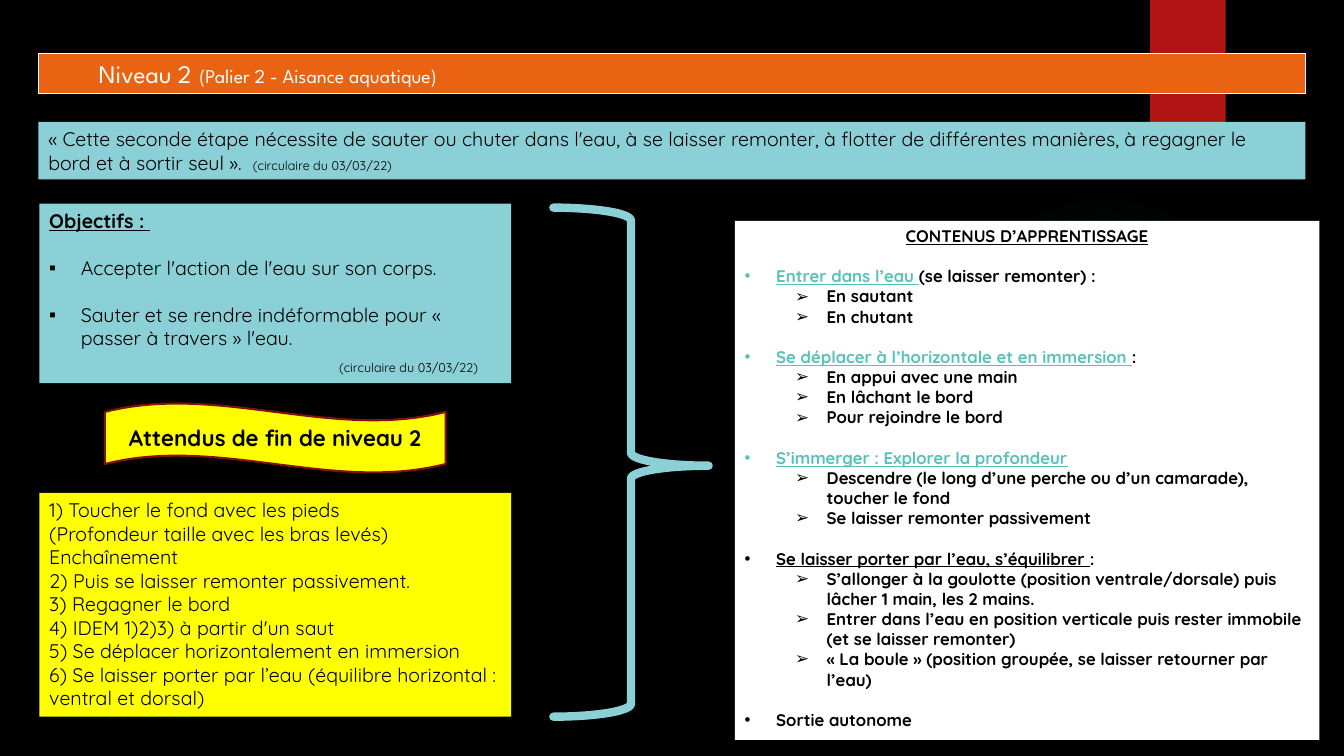
from lxml.etree import SubElement
from pptx import Presentation
from pptx.dml.color import RGBColor
from pptx.enum.shapes import MSO_SHAPE
from pptx.enum.text import MSO_ANCHOR, PP_ALIGN
from pptx.oxml import parse_xml
from pptx.oxml.ns import qn
from pptx.util import Pt

DRAWING_NS = "http://schemas.openxmlformats.org/drawingml/2006/main"
BLACK, WHITE, YELLOW = "000000", "FFFFFF", "FFFF00"
AQUA, TEAL, RED, ORANGE, MAROON = "8AD0D6", "58C1BA", "B01513", "EA6312", "82100E"
BODY_FONT, TITLE_FONT = "Quicksand", "League Spartan"
BULLET_INDENT, SUB_INDENT = 22.5, 58.5


def color(value):
    return RGBColor.from_string(value)


def add_span(para, text, size=14, font=BODY_FONT, ink=BLACK, bold=False, underline=False):
    span = para.add_run()
    span.text = text
    span.font.size = Pt(size)
    span.font.name = font
    span.font.bold = bold
    span.font.underline = underline
    span.font.color.rgb = color(ink)


class SlideBuilder:
    def __init__(self, page):
        self.page = page

    def box(self, left, top, width, height, kind=MSO_SHAPE.RECTANGLE,
            fill=None, line=None, weight=0.75, anchor=MSO_ANCHOR.TOP):
        box = self.page.shapes.add_shape(kind, Pt(left), Pt(top), Pt(width), Pt(height))
        box.shadow.inherit = False
        if fill:
            box.fill.solid()
            box.fill.fore_color.rgb = color(fill)
        else:
            box.fill.background()
        if line:
            box.line.color.rgb = color(line)
            box.line.width = Pt(weight)
        else:
            box.line.fill.background()
        box.text_frame.word_wrap = True
        box.text_frame.vertical_anchor = anchor
        return box

    def paragraph(self, box, *spans, align=PP_ALIGN.LEFT, before=0, bullet=None,
                  indent=0, tabs=(), **style):
        """Each span is a text or a pair of text and its own format."""
        frame = box.text_frame
        para = frame.paragraphs[0]
        if para.runs:
            para = frame.add_paragraph()
        para.alignment = align
        if before:
            para.space_before = Pt(before)
        properties = para._p.get_or_add_pPr()
        properties.set("marL", str(Pt(indent)))
        properties.set("indent", str(-Pt(BULLET_INDENT) if bullet else 0))
        if bullet:
            SubElement(properties, qn("a:buFont"), typeface="Arial")
            SubElement(properties, qn("a:buChar"), char=bullet)
        else:
            SubElement(properties, qn("a:buNone"))
        if tabs:
            stops = SubElement(properties, qn("a:tabLst"))
            for position in tabs:
                SubElement(stops, qn("a:tab"), pos=str(Pt(position)), algn="l")
        for span in spans:
            text, own_style = (span, {}) if isinstance(span, str) else span
            add_span(para, text, **{**style, **own_style})

    def glow(self, left, top, size, tint, stops):
        glow = self.box(left, top, size, size, MSO_SHAPE.OVAL, fill=tint)
        marks = "".join(
            f'<a:gs pos="{place * 1000}"><a:srgbClr val="{tint}">'
            f'<a:alpha val="{alpha * 1000}"/></a:srgbClr></a:gs>'
            for place, alpha in stops)
        gradient = parse_xml(
            f'<a:gradFill xmlns:a="{DRAWING_NS}"><a:gsLst>{marks}</a:gsLst><a:path path="circle">'
            '<a:fillToRect l="50000" t="50000" r="50000" b="50000"/></a:path></a:gradFill>')
        properties = glow._element.spPr
        properties.replace(properties.find(qn("a:solidFill")), gradient)

    def brace(self, left, top, width, height, line, weight, adjustments):
        brace = self.box(left, top, width, height, MSO_SHAPE.RIGHT_BRACE, line=line, weight=weight)
        for index, value in enumerate(adjustments):
            brace.adjustments[index] = value
        brace._element.spPr.find(qn("a:ln")).set("cap", "rnd")


deck = Presentation()
deck.slide_width, deck.slide_height = Pt(960), Pt(540)
page = deck.slides.add_slide(deck.slide_layouts[6])
page.background.fill.solid()
page.background.fill.fore_color.rgb = color(BLACK)
builder = SlideBuilder(page)

# Backdrop
builder.glow(677.5, 131.8, 221.8, "50B9C1", [(0, 7), (36, 6), (69, 0)])
builder.box(821.5, 0, 54, 90, fill=RED)

# Objectives
SOURCE = "(circulaire du 03/03/22)"
objectives = builder.box(28.1, 145.4, 337, 128.2, fill=AQUA)
builder.paragraph(objectives, "Objectifs : ", bold=True, underline=True)
for goal in ("Accepter l'action de l'eau sur son corps.",
             "Sauter et se rendre indéformable pour « passer à travers » l'eau."):
    builder.paragraph(objectives, goal, bullet="▪", indent=BULLET_INDENT, before=16.8)
builder.paragraph(objectives, SOURCE, size=9, indent=207, before=7)

# Expected results
expected = builder.box(28.1, 352.1, 337, 159.8, fill=YELLOW)
for step in ("1) Toucher le fond avec les pieds",
             "(Profondeur taille avec les bras levés)",
             "Enchaînement",
             "2) Puis se laisser remonter passivement.",
             "3) Regagner le bord",
             "4) IDEM 1)2)3) à partir d'un saut",
             "5) Se déplacer horizontalement en immersion",
             "6) Se laisser porter par l’eau (équilibre horizontal : ventral et dorsal)"):
    builder.paragraph(expected, step)

# Quotation and title bar
quotation = builder.box(27.4, 87.1, 905, 41, fill=AQUA)
builder.paragraph(
    quotation,
    "« Cette seconde étape nécessite de sauter ou chuter dans l'eau, à se laisser remonter, "
    "à flotter de différentes manières, à regagner le bord et à sortir seul ».  ",
    (SOURCE, {"size": 9}))
title = builder.box(27.4, 38.2, 905, 28.8, fill=ORANGE, line=WHITE)
builder.paragraph(title, "\tNiveau 2\t", ("(Palier 2 - Aisance aquatique)", {"size": 14}),
                  size=18, font=TITLE_FONT, ink=WHITE, tabs=(360, 612))

# Banner
banner = builder.box(74.9, 288, 243.4, 49.7, MSO_SHAPE.WAVE, fill=YELLOW, line=MAROON,
                     weight=1.5, anchor=MSO_ANCHOR.MIDDLE)
builder.paragraph(banner, "Attendus de fin de niveau 2", size=16, bold=True,
                  align=PP_ALIGN.CENTER)

# Learning contents: heading, rest of the heading line, heading colour, items
LESSONS = [
    ("Entrer dans l’eau ", "(se laisser remonter) :", TEAL,
     ["En sautant", "En chutant"]),
    ("Se déplacer à l’horizontale et en immersion ", ":", TEAL,
     ["En appui avec une main", "En lâchant le bord", "Pour rejoindre le bord"]),
    ("S’immerger : Explorer la profondeur", "", TEAL,
     ["Descendre (le long d’une perche ou d’un camarade), toucher le fond",
      "Se laisser remonter passivement"]),
    ("Se laisser porter par l’eau, s’équilibrer ", ":", BLACK,
     ["S’allonger à la goulotte (position ventrale/dorsale) puis lâcher 1 main, les 2 mains.",
      "Entrer dans l’eau en position verticale puis rester immobile (et se laisser remonter)",
      "« La boule » (position groupée, se laisser retourner par l’eau)"]),
    ("", "Sortie autonome", BLACK, []),
]
contents = builder.box(524.9, 157.7, 417.6, 370.8, fill=WHITE)
strong = {"size": 12, "bold": True}
builder.paragraph(contents, "CONTENUS D’APPRENTISSAGE", underline=True,
                  align=PP_ALIGN.CENTER, **strong)
for heading, rest, ink, items in LESSONS:
    spans = [(heading, {"ink": ink, "underline": True}), (rest, {})]
    builder.paragraph(contents, *[span for span in spans if span[0]], bullet="•",
                      indent=BULLET_INDENT, before=14.4, **strong)
    for item in items:
        builder.paragraph(contents, item, bullet="➢", indent=SUB_INDENT, **strong)

# Brace
builder.brace(395.3, 148.3, 110.9, 363.6, AQUA, 6, (0.083, 0.507))

deck.save("out.pptx")
